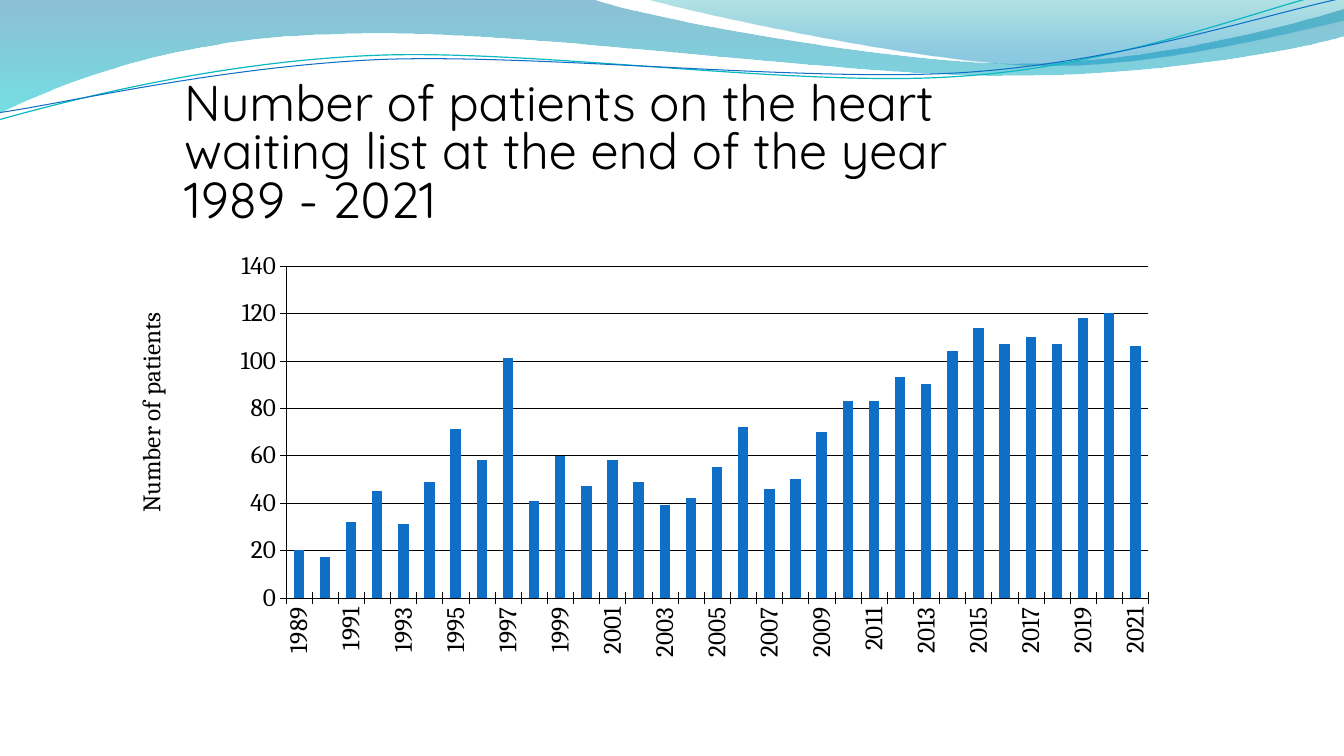
from lxml.etree import SubElement
from pptx import Presentation
from pptx.chart.data import CategoryChartData
from pptx.dml.color import RGBColor
from pptx.enum.chart import XL_CHART_TYPE as ChartType, XL_TICK_MARK as TickMark
from pptx.oxml import parse_xml
from pptx.oxml.ns import nsdecls, qn
from pptx.util import Cm, Pt

BLACK = RGBColor(0x00, 0x00, 0x00)
BLUE = RGBColor(0x0F, 0x6F, 0xC6)
TEAL = RGBColor(0x0A, 0xB8, 0xBF)
DEEP_BLUE = RGBColor(0x00, 0x74, 0xA1)
AQUA = RGBColor(0x00, 0xC6, 0xCF)
SEA_GREEN = RGBColor(0x00, 0xA1, 0xA9)
SKY_BLUE = RGBColor(0x00, 0x8B, 0xBF)

TITLE = "Number of patients on the heart waiting list at the end of the year 1989 - 2021"
AXIS_TITLE = "Number of patients"
YEARS = range(1989, 2022)
PATIENTS = [20, 17, 32, 45, 31, 49, 71, 58, 101, 41, 60, 47, 58, 49, 39, 42, 55,
            72, 46, 50, 70, 83, 83, 93, 90, 104, 114, 107, 110, 107, 118, 120, 106]

# Outlines in cm: a start point, then lines (x, y) and curves (x1, y1, x2, y2, x, y).
# Gradient stops: position, colour, opacity in percent.
BANDS = [
    ([(0, 0), (14.91, -0.03),
      (16.1, 0.43, 22.45, 1.6, 25.68, 1.6), (28.88, 1.6, 32.44, 0.66, 33.86, 0.23),
      (33.88, 0.91),
      (33.3, 1.12, 29.44, 1.93, 25.25, 1.91), (20.96, 1.91, 12.93, 0.71, 8.71, 0.86),
      (4.37, 0.91, 1.55, 2.11, -0.05, 2.87), (0, 0)],
     [(0, DEEP_BLUE, 45), (1, AQUA, 55)]),
    ([(16.21, -0.03),
      (17.25, 0.28, 23.09, 1.57, 26.04, 1.65), (28.96, 1.75, 32.56, 0.81, 33.86, 0.53),
      (33.86, 0), (16.21, -0.03)],
     [(0, SEA_GREEN, 30), (0.8, SKY_BLUE, 45)]),
]
WAVES = [
    ([(-0.03, 3.02), (1.6, 2.57, 5.33, 1.57, 9.37, 1.4),
      (13.39, 1.22, 20.04, 2.21, 24.1, 1.93), (28.19, 1.68, 31.78, 0.2, 33.78, -0.25)],
     TEAL, 0.85),
    ([(-0.03, 2.84), (1.57, 2.62, 5.54, 1.68, 9.58, 1.5),
      (13.64, 1.35, 20.22, 2.08, 24.26, 1.83), (28.3, 1.57, 31.88, 0.36, 33.86, -0.05)],
     BLUE, 0.75),
]


def add_outline(s, outline, close):
    """Build the outline through its end points, then bend the curved steps."""
    start, *steps = outline
    builder = s.shapes.build_freeform(Cm(start[0]), Cm(start[1]))
    builder.add_line_segments([(Cm(step[-2]), Cm(step[-1])) for step in steps], close=close)
    sp = builder.convert_to_shape()
    sp.shadow.inherit = False
    segments = list(sp.element.spPr.iter(qn("a:lnTo")))
    for segment, step in zip(segments, steps):
        if len(step) == 6:
            curve = parse_xml(f'<a:cubicBezTo {nsdecls("a")}/>')
            for x, y in zip(step[::2], step[1::2]):
                SubElement(curve, qn("a:pt"), x=str(Cm(x) - sp.left), y=str(Cm(y) - sp.top))
            segment.getparent().replace(segment, curve)
    return sp


def add_band(s, outline, stops):
    sp = add_outline(s, outline, True)
    sp.line.fill.background()
    sp.fill.gradient()
    sp.fill.gradient_angle = 270
    for stop, (position, color, _) in zip(sp.fill.gradient_stops, stops):
        stop.position = position
        stop.color.rgb = color
    colors = sp.element.spPr.find(qn("a:gradFill")).iter(qn("a:srgbClr"))
    for clr, (_, _, opacity) in zip(colors, stops):
        SubElement(clr, qn("a:alpha"), val=str(opacity * 1000))


def add_wave(s, outline, color, width):
    sp = add_outline(s, outline, False)
    sp.fill.background()
    sp.line.color.rgb = color
    sp.line.width = Pt(width)


def set_layout(parent, position, **settings):
    """Replace the automatic layout of a chart part by a fixed one."""
    for old in parent.findall(qn("c:layout")):
        parent.remove(old)
    items = "".join(f'<c:{tag} val="{val}"/>' for tag, val in settings.items())
    parent.insert(position, parse_xml(
        f'<c:layout {nsdecls("c")}><c:manualLayout>{items}</c:manualLayout></c:layout>'))


def style_font(font, name, size):
    font.name = name
    font.size = Pt(size)
    font.bold = False
    font.color.rgb = BLACK


def style_line(line):
    line.color.rgb = BLACK
    line.width = Pt(0.25)


def add_title(s):
    tf = s.shapes.add_textbox(Cm(4.39), Cm(1.96), Cm(21.36), Cm(3.18)).text_frame
    tf.word_wrap = True
    p = tf.paragraphs[0]
    p.text = TITLE
    p.line_spacing = 0.8
    style_font(p.runs[0].font, "Quicksand", 36)


def add_patient_chart(s):
    data = CategoryChartData()
    data.categories = [str(year) for year in YEARS]
    data.add_series("Series 1", PATIENTS)
    chart = s.shapes.add_chart(ChartType.COLUMN_STACKED, Cm(2.39), Cm(5.69),
                               Cm(29.34), Cm(12.19), data).chart
    chart.has_legend = False
    chart.has_title = False
    style_font(chart.font, "Cambria", 18)

    plot = chart.plots[0]
    plot.vary_by_categories = False
    plot.gap_width = 150
    plot.overlap = 100
    fill = plot.series[0].format.fill
    fill.solid()
    fill.fore_color.rgb = BLUE

    years, counts = chart.category_axis, chart.value_axis
    for axis in (years, counts):
        axis.major_tick_mark = TickMark.CROSS
        axis.minor_tick_mark = TickMark.NONE
        style_font(axis.tick_labels.font, "Cambria", 18)
        style_line(axis.format.line)
    counts.minimum_scale, counts.maximum_scale, counts.major_unit = 0, 140, 20
    style_line(counts.major_gridlines.format.line)

    tf = counts.axis_title.text_frame
    tf.text = AXIS_TITLE
    style_font(tf.paragraphs[0].runs[0].font, "Cambria", 18)

    # Upright year labels, every second one shown
    years_xml = years._element
    years_xml.find(qn("c:txPr")).find(qn("a:bodyPr")).set("rot", "-5400000")
    skip = parse_xml(f'<c:tickLblSkip {nsdecls("c")} val="2"/>')
    years_xml.find(qn("c:noMultiLvlLbl")).addprevious(skip)

    set_layout(counts.axis_title._element, 1, xMode="edge", yMode="edge", x=0.03, y=0.17)
    set_layout(chart._chartSpace.chart.plotArea, 0, layoutTarget="inner",
               xMode="edge", yMode="edge", x=0.164, y=0.083, w=0.741, h=0.686)


def main():
    prs = Presentation()
    prs.slide_width, prs.slide_height = Cm(33.87), Cm(19.05)
    s = prs.slides.add_slide(prs.slide_layouts[6])
    for outline, stops in BANDS:
        add_band(s, outline, stops)
    for outline, color, width in WAVES:
        add_wave(s, outline, color, width)
    add_title(s)
    add_patient_chart(s)
    prs.save("out.pptx")


if __name__ == "__main__":
    main()
